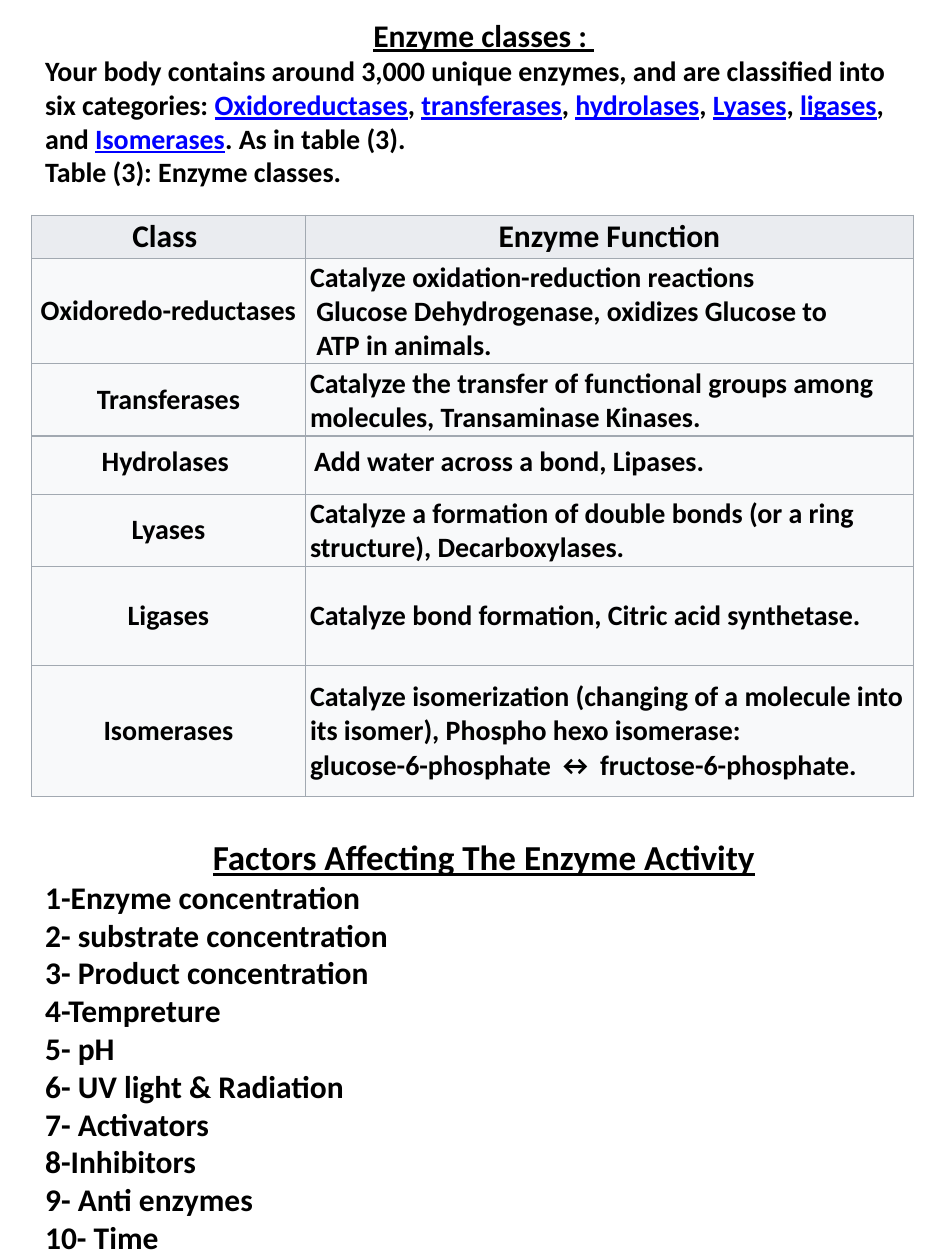
from lxml.etree import SubElement
from pptx import Presentation
from pptx.dml.color import RGBColor
from pptx.enum.text import MSO_ANCHOR as Anchor, MSO_AUTO_SIZE as AutoSize, PP_ALIGN as Align
from pptx.oxml.ns import qn
from pptx.util import Cm, Pt

COLORS = {
    "text": "000000",
    "link": "0000FF",
    "border": "A2A9B1",
    "header": "EAECF0",
    "body": "F8F9FA",
}
FONT = "Calibri"

TITLE = "Enzyme classes : "
# Every second piece is a class name set as a link
INTRO = [
    "Your body contains around 3,000 unique enzymes, and are classified into six categories: ",
    "Oxidoreductases", ", ", "transferases", ", ", "hydrolases", ", ",
    "Lyases", ", ", "ligases", ", and ", "Isomerases", ". As in table (3).",
]
CAPTION = "Table (3): Enzyme classes."

HEADER = ("Class ", "Enzyme Function")
CLASSES = [
    ("Oxidoredo-reductases", [
        "Catalyze oxidation-reduction reactions",
        " Glucose Dehydrogenase, oxidizes Glucose to",
        " ATP in animals.",
    ]),
    ("Transferases", [
        "Catalyze the transfer of functional groups among molecules, Transaminase Kinases.",
    ]),
    ("Hydrolases ", ["Add water across a bond, Lipases."]),
    ("Lyases", [
        "Catalyze a formation of double bonds (or a ring structure), Decarboxylases.",
    ]),
    ("Ligases", ["Catalyze bond formation, Citric acid synthetase."]),
    ("Isomerases", [
        "Catalyze isomerization (changing of a molecule into its isomer), Phospho hexo isomerase:",
        "glucose-6-phosphate ↔ fructose-6-phosphate.",
    ]),
]
COLUMN_WIDTHS = (5.51, 12.27)
ROW_HEIGHTS = (0.84, 2.06, 1.42, 1.17, 1.42, 2.01, 2.64)
TOP_ANCHORED_ROW = 3

FACTORS_TITLE = "Factors Affecting The Enzyme Activity"
FACTORS = [
    "1-Enzyme concentration",
    "2- substrate concentration",
    "3- Product concentration",
    "4-Tempreture",
    "5- pH",
    "6- UV light & Radiation",
    "7- Activators",
    "8-Inhibitors",
    "9- Anti enzymes",
    "10- Time",
]
TABLE_GAP = 370  # points left for the table between caption and factors


def write(paragraph, text, size=16, color="text", underline=False, align=Align.LEFT, before=0):
    paragraph.alignment = align
    if before:
        paragraph.space_before = Pt(before)
    run = paragraph.add_run()
    run.text = text
    font = run.font
    font.name, font.size, font.bold, font.underline = FONT, Pt(size), True, underline
    font.color.rgb = RGBColor.from_string(COLORS[color])


def add_borders(cell):
    properties = cell._tc.get_or_add_tcPr()
    for side in ("lnL", "lnR", "lnT", "lnB"):
        line = SubElement(properties, qn(f"a:{side}"), w=str(Pt(0.75)))
        fill = SubElement(line, qn("a:solidFill"))
        SubElement(fill, qn("a:srgbClr"), val=COLORS["border"])


def fill_cell(cell, lines, fill, roomy=False, **text_format):
    side, edge = (0.18, 0.18) if roomy else (0.1, 0.05)
    cell.margin_left = cell.margin_right = Cm(side)
    cell.margin_top = cell.margin_bottom = Cm(edge)
    cell.vertical_anchor = Anchor.TOP if roomy else Anchor.MIDDLE
    add_borders(cell)
    cell.fill.solid()
    cell.fill.fore_color.rgb = RGBColor.from_string(COLORS[fill])
    frame = cell.text_frame
    for index, line in enumerate(lines):
        paragraph = frame.add_paragraph() if index else frame.paragraphs[0]
        write(paragraph, line, **text_format)


def add_page_text(slide):
    frame = slide.shapes.add_textbox(Cm(0.66), Cm(0.2), Cm(18.19), Cm(28.91)).text_frame
    frame.word_wrap = True
    frame.auto_size = AutoSize.SHAPE_TO_FIT_TEXT
    write(frame.paragraphs[0], TITLE, size=18, underline=True, align=Align.CENTER)
    intro = frame.add_paragraph()
    for index, piece in enumerate(INTRO):
        is_link = index % 2 == 1
        write(intro, piece, color="link" if is_link else "text", underline=is_link)
    write(frame.add_paragraph(), CAPTION)
    write(frame.add_paragraph(), FACTORS_TITLE, size=20, underline=True,
          align=Align.CENTER, before=TABLE_GAP)
    for factor in FACTORS:
        write(frame.add_paragraph(), factor, size=18)


def add_class_table(slide):
    table = slide.shapes.add_table(
        len(ROW_HEIGHTS), len(COLUMN_WIDTHS), Cm(0.64), Cm(4.34),
        Cm(sum(COLUMN_WIDTHS)), Cm(sum(ROW_HEIGHTS))).table
    table.horz_banding = False
    for column, width in zip(table.columns, COLUMN_WIDTHS):
        column.width = Cm(width)
    for row, height in zip(table.rows, ROW_HEIGHTS):
        row.height = Cm(height)
    for column, heading in enumerate(HEADER):
        fill_cell(table.cell(0, column), [heading], "header", size=18, align=Align.CENTER)
    for row, (enzyme_class, function) in enumerate(CLASSES, start=1):
        roomy = row == TOP_ANCHORED_ROW
        fill_cell(table.cell(row, 0), [enzyme_class], "body", roomy, align=Align.CENTER)
        fill_cell(table.cell(row, 1), function, "body", roomy)


def main():
    presentation = Presentation()
    presentation.slide_width, presentation.slide_height = Cm(19.05), Cm(25.4)
    slide = presentation.slides.add_slide(presentation.slide_layouts[6])
    add_page_text(slide)
    add_class_table(slide)
    presentation.save("out.pptx")


if __name__ == "__main__":
    main()
